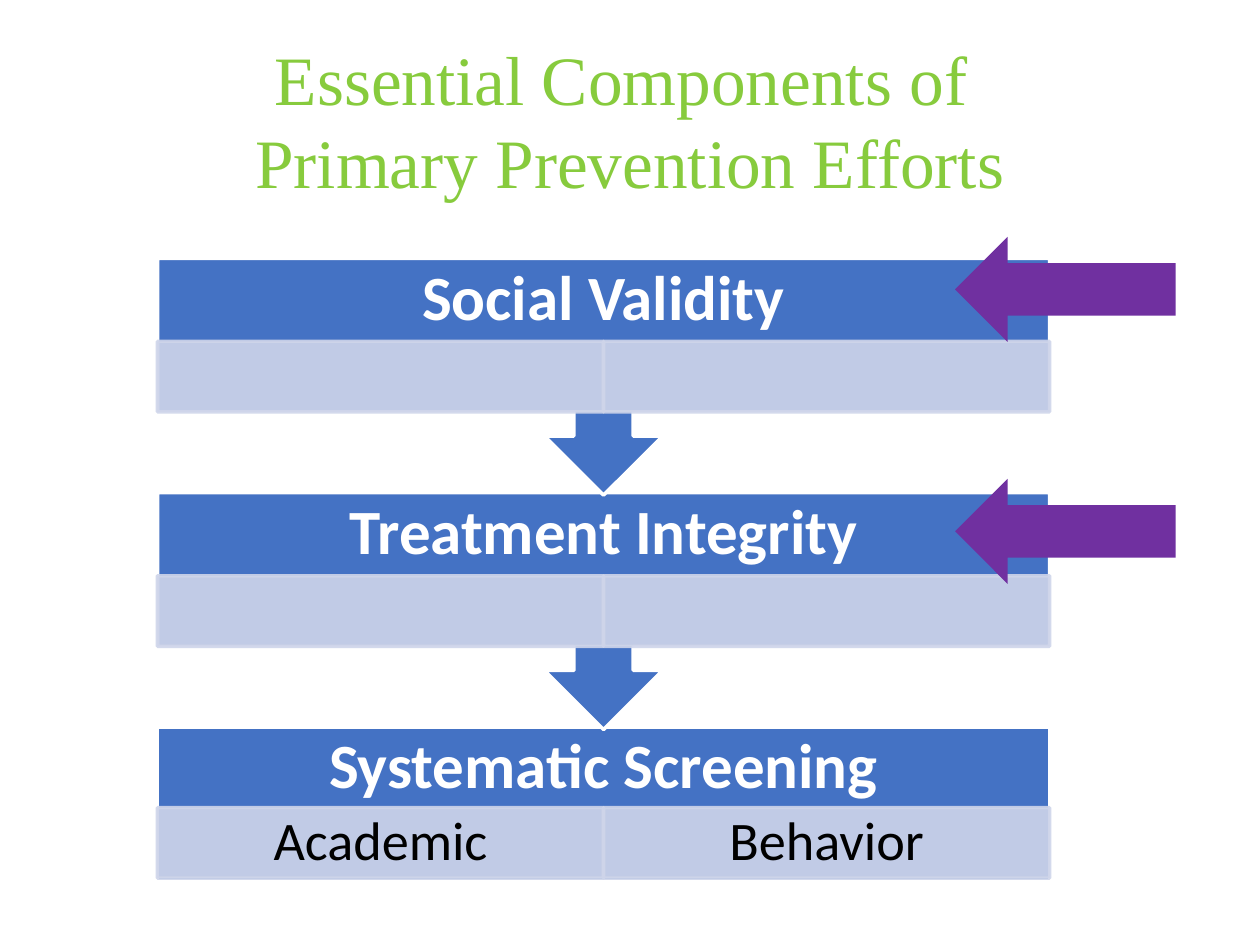
from dataclasses import dataclass

from lxml.etree import SubElement
from pptx import Presentation
from pptx.dml.color import RGBColor
from pptx.enum.shapes import MSO_SHAPE as Shape
from pptx.enum.text import MSO_ANCHOR as Anchor, PP_ALIGN as Align
from pptx.oxml.ns import qn
from pptx.util import Pt

WHITE = RGBColor(0xFF, 0xFF, 0xFF)
BLACK = RGBColor(0x00, 0x00, 0x00)
GREEN = RGBColor(0x87, 0xCB, 0x3D)
BLUE = RGBColor(0x44, 0x72, 0xC4)
PALE = RGBColor(0xCF, 0xD5, 0xEA)
PURPLE = RGBColor(0x70, 0x30, 0xA0)

LEFT, WIDTH = 90, 509.76
FIRST_TOP, PITCH = 147.6, 133.92
HEADING_H, DETAIL_H = 47.52, 40.32
CALLOUT_H, BASE_H = 135.36, 87.84


@dataclass(frozen=True)
class Step:
    heading: str
    details: tuple[str, str] = ("", "")
    detail_offset: float = HEADING_H
    callout: bool = True


STEPS = (
    Step("Social Validity"),
    Step("Treatment Integrity"),
    Step("Systematic Screening", ("Academic", "Behavior"), 46.08, False),
)


def set_text(sp, text: str, *, size: float, color: RGBColor, font: str = "Calibri",
             bold: bool = False, spacing: float = 0.9) -> None:
    tf = sp.text_frame
    tf.word_wrap = True
    tf.vertical_anchor = Anchor.MIDDLE
    tf.margin_top = tf.margin_bottom = Pt(0)
    p = tf.paragraphs[0]
    p.text = text
    p.alignment = Align.CENTER
    p.line_spacing = spacing
    for r in p.runs:
        r.font.name = font
        r.font.size = Pt(size)
        r.font.bold = bold
        r.font.color.rgb = color


def add_text(s, x: float, y: float, w: float, h: float, text: str, **fmt) -> None:
    set_text(s.shapes.add_textbox(Pt(x), Pt(y), Pt(w), Pt(h)), text, **fmt)


def add_block(s, kind: Shape, x: float, y: float, w: float, h: float,
              fill: RGBColor, line: RGBColor | None = None, opacity: int = 100):
    sp = s.shapes.add_shape(kind, Pt(x), Pt(y), Pt(w), Pt(h))
    sp.shadow.inherit = False
    sp.fill.solid()
    sp.fill.fore_color.rgb = fill
    if line is None:
        sp.line.fill.background()
    else:
        sp.line.color.rgb = line
        sp.line.width = Pt(2)
    if opacity < 100:
        for color in sp._element.spPr.iter(qn("a:srgbClr")):
            SubElement(color, qn("a:alpha"), val=str(opacity * 1000))
    return sp


def add_step(s, step: Step, top: float) -> None:
    if step.callout:
        sp = add_block(s, Shape.UP_ARROW_CALLOUT, LEFT, top, WIDTH, CALLOUT_H, BLUE, WHITE)
        sp.rotation = 180
    else:
        add_block(s, Shape.RECTANGLE, LEFT, top, WIDTH, BASE_H, BLUE, WHITE)
    add_text(s, LEFT, top, WIDTH, HEADING_H, step.heading, size=36, color=WHITE, bold=True)
    half = WIDTH / 2
    for i, detail in enumerate(step.details):
        sp = add_block(s, Shape.RECTANGLE, LEFT + i * half, top + step.detail_offset,
                       half, DETAIL_H, PALE, PALE, opacity=90)
        if detail:
            set_text(sp, detail, size=31, color=BLACK)


def main() -> None:
    prs = Presentation()
    prs.slide_width, prs.slide_height = Pt(720), Pt(540)
    s = prs.slides.add_slide(prs.slide_layouts[6])
    add_text(s, 36, 30.24, 648, 75.6, "Essential Components of \vPrimary Prevention Efforts",
             size=39.6, color=GREEN, font="Times New Roman", spacing=1.0)
    for i, step in reversed(list(enumerate(STEPS))):
        add_step(s, step, FIRST_TOP + i * PITCH)
    for top in (135.36, 273.6):
        add_block(s, Shape.LEFT_ARROW, 545.76, top, 126, 60, PURPLE)
    prs.save("out.pptx")


if __name__ == "__main__":
    main()
